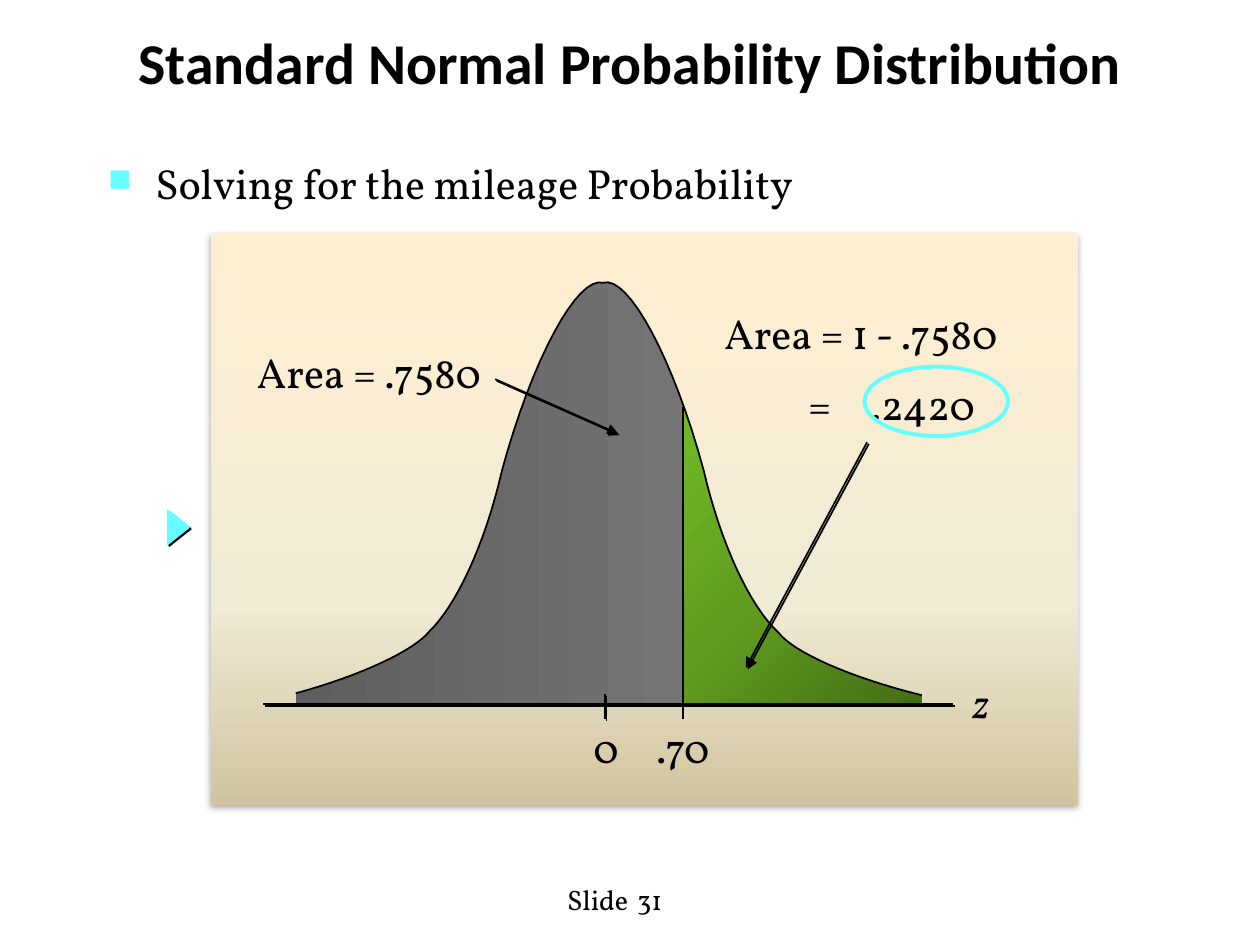
from lxml.etree import SubElement
from pptx import Presentation
from pptx.dml.color import RGBColor
from pptx.enum.shapes import MSO_CONNECTOR as CONN, MSO_SHAPE as SHAPE
from pptx.enum.text import MSO_ANCHOR as ANCHOR, PP_ALIGN as ALIGN
from pptx.oxml.ns import qn
from pptx.util import Pt

rgb = RGBColor.from_string
BLACK, CYAN = "000000", "66FFFF"
HARD = (0, 1.4, 45, 100)
SOFT = (3.5, 2.2, 90, 32)


def style(sp, grad=None, angle=0, line=None, width=1, shadow=None, arrow=False):
    """Set gradient stops, outline, shadow (blur, distance, angle, alpha) and arrowhead."""
    spPr = sp._element.spPr
    if grad:
        sp.fill.gradient()
        sp.fill.gradient_angle = angle
        stops = spPr.find(qn("a:gradFill")).find(qn("a:gsLst"))
        stops.clear()
        for pos, color in grad:
            gs = SubElement(stops, qn("a:gs"), pos=str(pos * 1000))
            SubElement(gs, qn("a:srgbClr"), val=color)
    if line:
        sp.line.color.rgb = rgb(line)
        sp.line.width = Pt(width)
    else:
        sp.line.fill.background()
    if arrow:
        SubElement(spPr.find(qn("a:ln")), qn("a:tailEnd"), type="triangle")
    effects = SubElement(spPr, qn("a:effectLst"))
    if shadow:
        blur, dist, direction, alpha = shadow
        outer = SubElement(effects, qn("a:outerShdw"), blurRad=str(Pt(blur)), dist=str(Pt(dist)),
                           dir=str(direction * 60000), algn="ctr", rotWithShape="0")
        color = SubElement(outer, qn("a:srgbClr"), val=BLACK)
        SubElement(color, qn("a:alpha"), val=str(alpha * 1000))


def text(box, *lines, wrap=False, **font):
    tf = slide.shapes.add_textbox(*map(Pt, box)).text_frame
    tf.word_wrap = wrap
    for i, line in enumerate(lines):
        p = tf.add_paragraph() if i else tf.paragraphs[0]
        r = p.add_run()
        r.text = line
        r.font.color.rgb = rgb(BLACK)
        for name, value in {"name": "Vollkorn", "size": Pt(24), **font}.items():
            setattr(r.font, name, value)
    return tf


prs = Presentation()
prs.slide_width, prs.slide_height = Pt(720), Pt(540)
slide = prs.slides.add_slide(prs.slide_layouts[6])
shapes = slide.shapes

# Footer
text((317, 501, 66, 27), "Slide", size=Pt(16))
text((357, 501, 36, 27), "31", size=Pt(16))

# Panel
panel = shapes.add_shape(SHAPE.RECTANGLE, Pt(120.5), Pt(133), Pt(495.5), Pt(327))
style(panel, [(0, "FFEFD1"), (65, "F0EBD5"), (100, "D1C39F")], 270, shadow=SOFT)

# Bulleted line
p = text((54.7, 90, 612, 40.3), "Solving for the mileage Probability", wrap=True).paragraphs[0]
p.line_spacing, p.space_before = 0.9, Pt(4.8)
pPr = p._p.get_or_add_pPr()
pPr.set("marL", str(Pt(27)))
pPr.set("indent", str(Pt(-27)))
SubElement(SubElement(pPr, qn("a:buClr")), qn("a:srgbClr"), val=CYAN)
SubElement(pPr, qn("a:buSzPct"), val="75000")
SubElement(pPr, qn("a:buChar"), char="■")

# Bell curve: each Bezier segment is two control points and an end point
AXIS, CUT = 402.3, 390.5
start = (169, 396.2)
segments = [
    ((206.6, 386), (236.9, 371.5), (245.2, 361)),
    ((260.6, 346.3), (277.2, 311), (286.6, 270)),
    ((303.8, 205.9), (329.8, 157.7), (344.6, 161.6)),
    ((359.3, 157), (385.2, 205.9), (402.2, 269)),
    ((411.8, 310.3), (428.4, 346.3), (444.8, 361.4)),
    ((453.6, 373), (486.7, 387.4), (526.8, 397.3)),
]
curve = [start]
for b, c, d in segments:
    a = curve[-1]
    for t in (i / 16 for i in range(1, 17)):
        u = 1 - t
        curve.append(tuple(u**3 * a[k] + 3 * u * u * t * b[k] + 3 * u * t * t * c[k] + t**3 * d[k]
                           for k in (0, 1)))
tail = [(CUT, 232)] + [pt for pt in curve if pt[0] > CUT]
left, right = start[0], curve[-1][0]

GRAY = [(0, "5E5E5E"), (100, "838383")]
GREEN = [(0, "446D16"), (50, "609C20"), (100, "72B925")]
for points, closed, fmt in [
    (curve + [(right, AXIS), (left, AXIS)], True, {"grad": GRAY}),
    (tail + [(right, AXIS), (CUT, AXIS)], True, {"grad": GREEN, "angle": 135}),
    (curve, False, {"line": BLACK}),
]:
    points = [(Pt(x), Pt(y)) for x, y in points]
    builder = shapes.build_freeform(*points[0])
    builder.add_line_segments(points[1:], close=closed)
    sp = builder.convert_to_shape()
    if not closed:
        sp.fill.background()
    style(sp, **fmt)

# Axis, ticks and arrows
for ends, fmt in [
    ((345.6, 396.7, 345.6, 411), {"shadow": HARD}),
    ((150.5, AXIS, 544.5, AXIS), {"shadow": HARD}),
    ((CUT, 232.5, CUT, 411), {}),
    ((283, 216.7, 353, 247.7), {"shadow": HARD, "arrow": True}),
    ((495.5, 252.7, 426.2, 381.6), {"shadow": HARD, "arrow": True}),
]:
    style(shapes.add_connector(CONN.STRAIGHT, *map(Pt, ends)), line=BLACK, **fmt)

# Labels
text((332, 409, 26, 36), "0")
text((368, 409, 44.6, 36), ".70")
text((548.6, 383, 25, 36), "z", italic=True)
text((139.7, 194.4, 147.6, 36), "Area = .7580")
p = text((406.8, 172, 180, 77), "Area = 1 - .7580", "=\t.2420", wrap=True).paragraphs[1]
p.space_before = Pt(12)
pPr = p._p.get_or_add_pPr()
pPr.set("marL", str(Pt(48)))
pPr.set("indent", "0")
SubElement(SubElement(pPr, qn("a:tabLst")), qn("a:tab"), pos=str(Pt(75.6)), algn="l")

# Result ring and side marker
ring = shapes.add_shape(SHAPE.OVAL, Pt(494), Pt(209.5), Pt(82), Pt(39.6))
ring.fill.background()
style(ring, line=CYAN, width=2.25)
marker = shapes.add_shape(SHAPE.ISOSCELES_TRIANGLE, Pt(92.2), Pt(295.2), Pt(19.4), Pt(12.2))
marker.rotation = 90
marker.fill.solid()
marker.fill.fore_color.rgb = rgb(CYAN)
style(marker, line=CYAN, shadow=HARD)

# Title
tf = text((54, 7.2, 612, 55.4), "Standard Normal Probability Distribution", wrap=True,
          name="Calibri", size=Pt(33), bold=True)
tf.vertical_anchor = ANCHOR.MIDDLE
tf.paragraphs[0].alignment = ALIGN.CENTER

prs.save("out.pptx")
